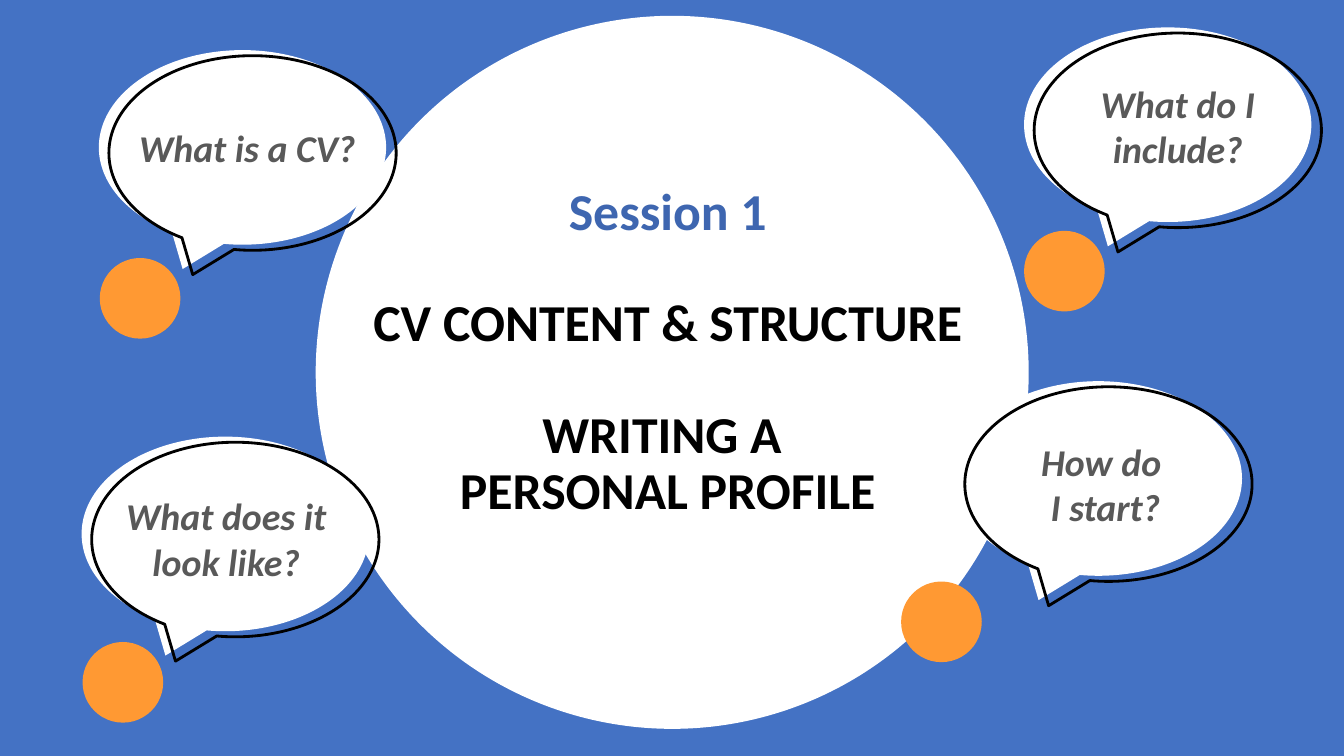
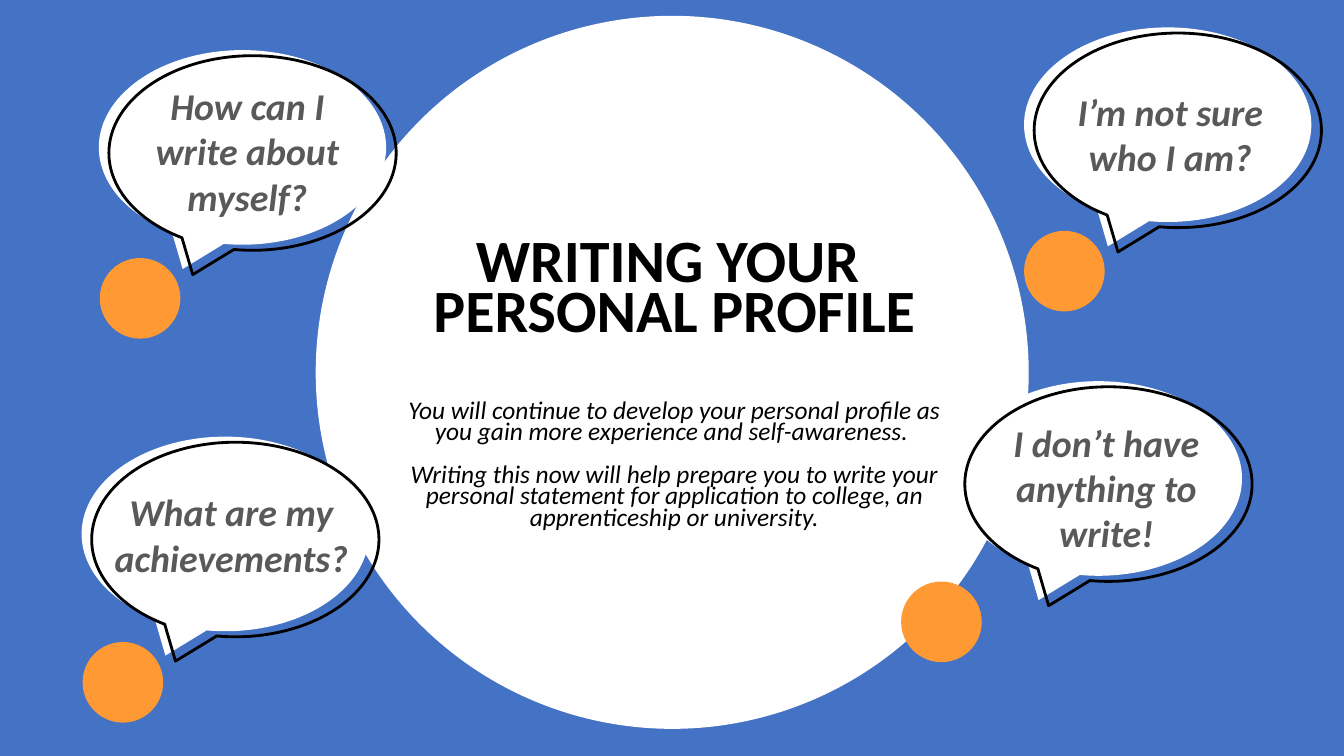
from collections import namedtuple

from pptx import Presentation
from pptx.dml.color import RGBColor
from pptx.enum.shapes import MSO_SHAPE
from pptx.enum.text import MSO_ANCHOR, MSO_AUTO_SIZE, PP_ALIGN
from pptx.util import Pt

BLUE = RGBColor(0x44, 0x72, 0xC4)
SESSION_BLUE = RGBColor(0x3E, 0x66, 0xB0)
ORANGE = RGBColor(0xFF, 0x99, 0x33)
WHITE = RGBColor(0xFF, 0xFF, 0xFF)
BLACK = RGBColor(0, 0, 0)
GREY = RGBColor(0x59, 0x59, 0x59)

Line = namedtuple("Line", "text size color bold italic gap", defaults=(BLACK, True, False, 0))
Question = namedtuple("Question", "text rows left top width")

BUBBLES_AND_DOTS = [
    ((731.5, 19.6), (731.5, 164.9)),
    ((58.3, 311.9), (59, 458.6)),
    ((682, 272.3), (643.7, 415.4)),
    ((70.6, 35.8), (71.3, 184.3)),
]


class SessionDeck:
    FONT = "Calibri"
    BUBBLE_SIZE = (205.2, 139)
    OUTLINE_SHIFT = (7.2, 4)
    DOT_SIZE = (57.6, 57.6)
    QUESTION_SIZE = 27
    ROW_HEIGHT = 32.5

    def __init__(self):
        self.presentation = Presentation()
        self.presentation.slide_width = Pt(960)
        self.presentation.slide_height = Pt(540)
        self.slide = None

    def add_slide(self):
        self.slide = self.presentation.slides.add_slide(self.presentation.slide_layouts[5])
        background = self.slide.background.fill
        background.solid()
        background.fore_color.rgb = BLUE
        self.shape(MSO_SHAPE.OVAL, (225.5, 11.3), (509.3, 509.3), fill=WHITE)

    def shape(self, preset, position, size, fill=None, outline=None):
        figure = self.slide.shapes.add_shape(preset, *map(Pt, (*position, *size)))
        figure.shadow.inherit = False
        if fill is None:
            figure.fill.background()
        else:
            figure.fill.solid()
            figure.fill.fore_color.rgb = fill
        if outline is None:
            figure.line.fill.background()
        else:
            figure.line.color.rgb = outline
            figure.line.width = Pt(2)

    def set_lines(self, frame, lines, spacing):
        frame.word_wrap = True
        for index, line in enumerate(lines):
            paragraph = frame.add_paragraph() if index else frame.paragraphs[0]
            paragraph.text = line.text
            paragraph.alignment = PP_ALIGN.CENTER
            paragraph.line_spacing = spacing
            paragraph.space_before = Pt(line.gap)
            font = paragraph.font
            font.name = self.FONT
            font.size = Pt(line.size)
            font.bold = line.bold
            font.italic = line.italic
            font.color.rgb = line.color

    def title(self, lines, left, top, width, height, spacing):
        title = self.slide.shapes.title
        self.slide.shapes.element.append(title.element)
        title.left, title.top, title.width, title.height = map(Pt, (left, top, width, height))
        title.text_frame.auto_size = MSO_AUTO_SIZE.NONE
        title.text_frame.vertical_anchor = MSO_ANCHOR.BOTTOM
        self.set_lines(title.text_frame, lines, spacing)

    def question(self, question):
        height = question.rows * self.ROW_HEIGHT + 8
        box = self.slide.shapes.add_textbox(
            *map(Pt, (question.left, question.top, question.width, height)))
        box.text_frame.auto_size = MSO_AUTO_SIZE.SHAPE_TO_FIT_TEXT
        lines = [Line(text, self.QUESTION_SIZE, GREY, italic=True)
                 for text in question.text.split("\n")]
        self.set_lines(box.text_frame, lines, 1.0)

    def bubble(self, question, position, dot):
        callout = MSO_SHAPE.OVAL_CALLOUT
        shifted = [start + shift for start, shift in zip(position, self.OUTLINE_SHIFT)]
        self.shape(callout, position, self.BUBBLE_SIZE, fill=WHITE)
        self.question(question)
        self.shape(callout, shifted, self.BUBBLE_SIZE, outline=BLACK)
        self.shape(MSO_SHAPE.OVAL, dot, self.DOT_SIZE, fill=ORANGE)

    def bubbles(self, questions):
        for question, (position, dot) in zip(questions, BUBBLES_AND_DOTS):
            self.bubble(question, position, dot)


def main():
    deck = SessionDeck()

    deck.add_slide()
    deck.title([
        Line("Session 1", 37, SESSION_BLUE),
        Line("CV CONTENT & STRUCTURE", 37, gap=40),
        Line("WRITING A ", 37, gap=40),
        Line("PERSONAL PROFILE", 37),
    ], 222.5, 87, 509, 288.7, 0.9)
    deck.bubbles([
        Question("What do I include?", 2, 763.2, 54, 156.2),
        Question("What does it look like?", 2, 69.1, 348.5, 185),
        Question("How do \nI start?", 2, 700.6, 309.6, 178),
        Question("What is a CV?", 1, 84.2, 85.7, 185),
    ])

    deck.add_slide()
    deck.title([
        Line("WRITING YOUR \nPERSONAL PROFILE", 42.9),
        Line("You will continue to develop your personal profile as you gain more "
             "experience and self-awareness. ", 18.1, bold=False, italic=True, gap=42.4),
        Line("Writing this now will help prepare you to write your personal statement "
             "for application to college, an apprenticeship or university.",
             18.1, bold=False, italic=True, gap=15.5),
    ], 273.6, 104.4, 416.2, 278, 0.7)
    deck.bubbles([
        Question("I’m not sure who I am?", 2, 750.2, 59.8, 171.4),
        Question("What are my achievements?", 2, 72.7, 345.6, 185),
        Question("I don’t have anything to write!", 3, 701.3, 295.9, 178),
        Question("How can I write about myself?", 3, 84.2, 55.4, 185),
    ])

    deck.presentation.save("out.pptx")


if __name__ == "__main__":
    main()
